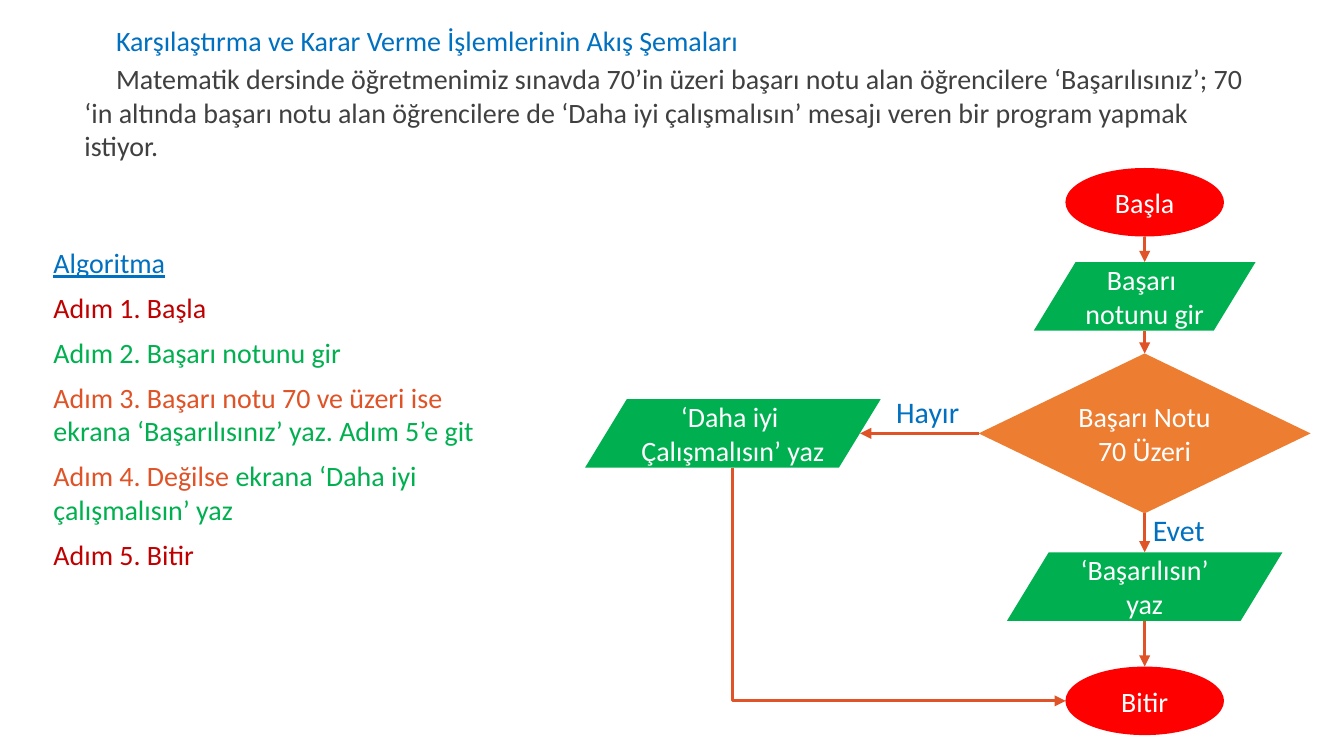
"""Builds a slide with an exam-grade algorithm and its flow chart."""
from lxml.etree import SubElement
from pptx import Presentation
from pptx.dml.color import RGBColor
from pptx.enum.shapes import MSO_CONNECTOR, MSO_SHAPE
from pptx.enum.text import MSO_ANCHOR, PP_ALIGN
from pptx.oxml.ns import qn
from pptx.util import Inches, Pt

BLUE = RGBColor(0x00, 0x70, 0xC0)
GRAY = RGBColor(0x40, 0x40, 0x40)
WHITE = RGBColor(0xFF, 0xFF, 0xFF)
RED = RGBColor(0xFF, 0x00, 0x00)
DARK = RGBColor(0xC0, 0x00, 0x00)
GREEN = RGBColor(0x00, 0xB0, 0x50)
RUST = RGBColor(0xDF, 0x53, 0x27)
AMBER = RGBColor(0xED, 0x7D, 0x31)
CELL = Inches(0.1)
MID = 85.17
SIDE = 54.53

deck = Presentation()
deck.slide_width = 100 * CELL
deck.slide_height = 100 * CELL * 9 // 16
slide = deck.slides.add_slide(deck.slide_layouts[6])


def write(para, text, color=WHITE, size=15, align=PP_ALIGN.LEFT, indent=0, gap=0, under=False):
    para.alignment = align
    para.space_before = Pt(gap)
    para._p.get_or_add_pPr().set("indent", str(int(indent * CELL)))
    for n, line in enumerate(text.split("\n")):
        if n:
            para.add_line_break()
        run = para.add_run()
        run.text = line
        run.font.name = "Calibri"
        run.font.size = Pt(size)
        run.font.color.rgb = color
        run.font.underline = under


def join(kind, *ends):
    link = slide.shapes.add_connector(kind, *[int(v * CELL) for v in ends])
    link.line.color.rgb = RUST
    link.line.width = Pt(1.5)
    SubElement(link.line._get_or_add_ln(), qn("a:tailEnd"), type="triangle")
    SubElement(link._element.spPr, qn("a:effectLst"))
    return link


title = "Karşılaştırma ve Karar Verme İşlemlerinin Akış Şemaları"
task = ("Matematik dersinde öğretmenimiz sınavda 70’in üzeri başarı notu alan öğrencilere "
        "‘Başarılısınız’; 70 ‘in altında başarı notu alan öğrencilere de ‘Daha iyi çalışmalısın’ "
        "mesajı veren bir program yapmak istiyor.")
steps = [
    [("Algoritma", BLUE)],
    [("Adım 1. Başla", DARK)],
    [("Adım 2. Başarı notunu gir", GREEN)],
    [("Adım 3. Başarı notu 70 ve üzeri ise ", RUST), ("ekrana ‘Başarılısınız’ yaz. Adım 5’e git", GREEN)],
    [("Adım 4. Değilse ", RUST), ("ekrana ‘Daha iyi çalışmalısın’ yaz", GREEN)],
    [("Adım 5. Bitir", DARK)],
]
texts = [
    ((5.3, 1.25, 89.2, 3.4), [[(title, BLUE)]], 15, 2.35),
    ((5.3, 4.1, 89.2, 7.7), [[(task, GRAY)]], 15, 2.35),
    ((3, 17.8, 33.3, 29.2), steps, 15, 0),
    ((65.7, 28.8, 7.2, 3.6), [[("Hayır", BLUE)]], 16, 0),
    ((84.8, 37.6, 7.2, 3.6), [[("Evet", BLUE)]], 16, 0),
]
for place, paras, size, indent in texts:
    frame = slide.shapes.add_textbox(*[int(v * CELL) for v in place]).text_frame
    frame.word_wrap = True
    for n, parts in enumerate(paras):
        para = frame.add_paragraph() if n else frame.paragraphs[0]
        for text, color in parts:
            write(para, text, color, size, indent=indent, gap=6 if n else 0, under=text == "Algoritma")

OVAL, SLANT, GEM = MSO_SHAPE.OVAL, MSO_SHAPE.PARALLELOGRAM, MSO_SHAPE.DIAMOND
nodes = [
    (OVAL, "Başla", MID, 12.5, 11.8, 5.1, RED),
    (SLANT, "Başarı \nnotunu gir", MID, 19.5, 16.5, 5.1, GREEN),
    (GEM, "Başarı Notu 70 Üzeri", MID, 26.3, 24.7, 11.9, AMBER),
    (SLANT, "‘Başarılısın’ yaz", MID, 41.1, 20.5, 5.1, GREEN),
    (OVAL, "Bitir", MID, 49.6, 11.8, 5.1, RED),
    (SLANT, "‘Daha iyi \nÇalışmalısın’ yaz", SIDE, 29.7, 22, 5.1, GREEN),
]
for kind, text, mid, top, wide, high, fill in nodes:
    node = slide.shapes.add_shape(kind, *[int(v * CELL) for v in (mid - wide / 2, top, wide, high)])
    node.shadow.inherit = False
    node.fill.solid()
    node.fill.fore_color.rgb = fill
    node.line.fill.background()
    node.text_frame.word_wrap = True
    node.text_frame.vertical_anchor = MSO_ANCHOR.MIDDLE
    write(node.text_frame.paragraphs[0], text, align=PP_ALIGN.CENTER)
    if kind == SLANT:
        node.adjustments[0] = 0.61
    if kind == GEM:
        test = node

flow = nodes[:5]
links = [join(MSO_CONNECTOR.STRAIGHT, MID, up[3] + up[5], MID, down[3]) for up, down in zip(flow, flow[1:])]
links[1].end_connect(test, 0)
links[2].begin_connect(test, 2)
join(MSO_CONNECTOR.STRAIGHT, 72.8, 32.25, 64, 32.25).begin_connect(test, 1)

left, top, right, low = SIDE, 34.8, 79.3, 52.15
midx, midy = (left + right) / 2, (top + low) / 2
wide, high = low - top, right - left
bend = join(MSO_CONNECTOR.ELBOW, midx + wide / 2, midy - high / 2, midx - wide / 2, midy + high / 2)
bend._element.spPr.find(qn("a:xfrm")).set("rot", str(270 * 60000))
bend._element.spPr.find(qn("a:prstGeom")).set("prst", "bentConnector2")

deck.save("out.pptx")
